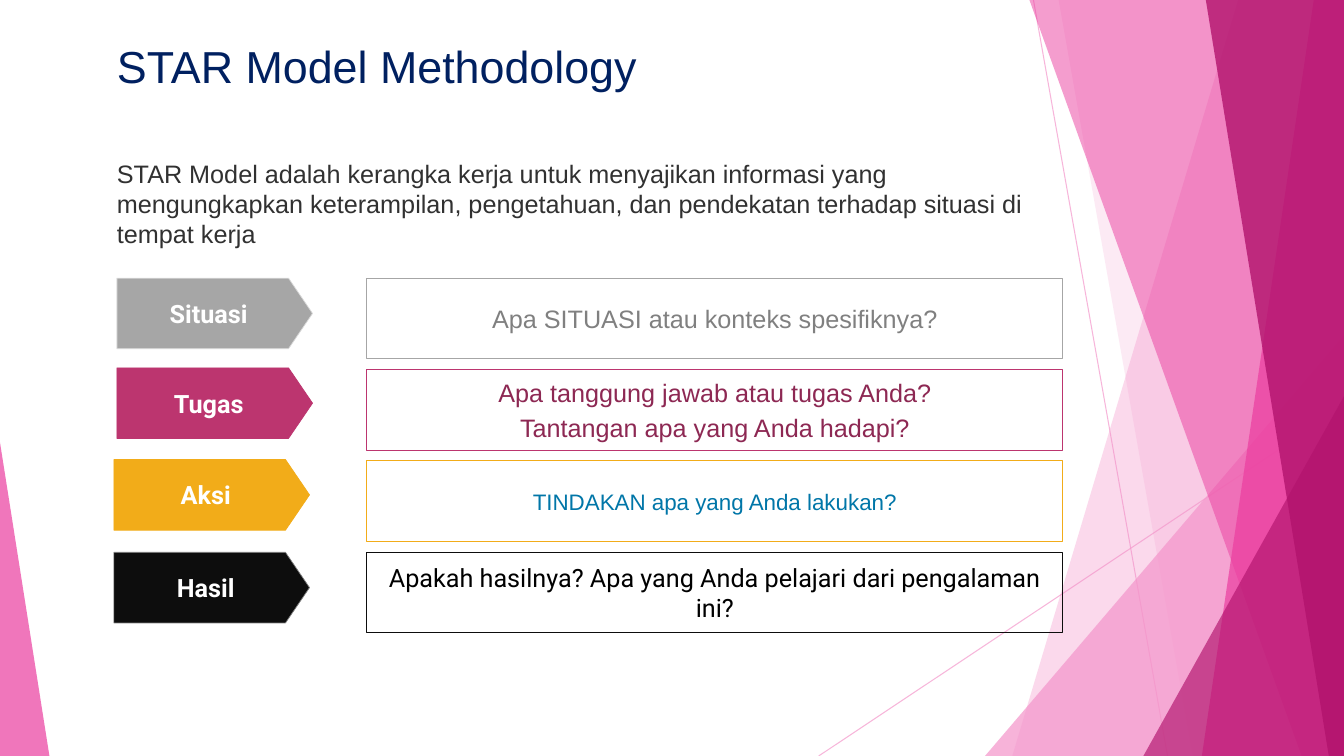
from lxml.etree import SubElement
from pptx import Presentation
from pptx.dml.color import RGBColor
from pptx.enum.shapes import MSO_CONNECTOR, MSO_SHAPE
from pptx.enum.text import MSO_ANCHOR, MSO_AUTO_SIZE, PP_ALIGN
from pptx.oxml.ns import qn
from pptx.util import Inches, Pt

WIDTH, HEIGHT = 13.33, 7.5

COLORS = {
    "light_pink": "F496CB", "pink": "EB3D9F", "magenta": "B2136D",
    "navy": "002060", "body": "313131", "white": "FFFFFF",
    "gray": "A6A6A6", "pale_gray": "D9D9D9", "mid_gray": "808080",
    "berry": "BC356F", "dark_berry": "8D2853",
    "amber": "F2AC19", "blue": "0076A8",
    "ink": "0D0D0D", "black": "000000",
}

# Facet decoration: start and end points
RAYS = [((10.25, 0), (11.58, HEIGHT)), ((WIDTH, 4.03), (8.12, HEIGHT))]

# Facets reach the right edge: top-left x, bottom-left x, colour, opacity
BACK_FACETS = [(12.28, 10.04, "light_pink", 36), (10.5, 11.83, "light_pink", 20)]
FRONT_FACETS = [
    (10.21, 12.91, "pink", 50),
    (13.03, 11.92, "pink", 70),
    (11.96, 13.18, "magenta", 80),
]

# STAR steps: label, tag left, tag top, tag fill, tag outline,
# questions, question colour, size, font, space after
STEPS = [
    ("Situasi", 1.16, 2.76, "gray", "pale_gray",
     ["Apa SITUASI atau konteks spesifiknya?"], "mid_gray", 18, "Arial", 3),
    ("Tugas", 1.16, 3.65, "berry", "berry",
     ["Apa tanggung jawab atau tugas Anda?", "Tantangan apa yang Anda hadapi?"],
     "dark_berry", 18, "Arial", 3),
    ("Aksi", 1.13, 4.56, "amber", "amber",
     ["TINDAKAN apa yang Anda lakukan?"], "blue", 16, "Arial", 0),
    ("Hasil", 1.13, 5.48, "ink", "mid_gray",
     ["Apakah hasilnya? Apa yang Anda pelajari dari pengalaman ini?"],
     "black", 18, "Roboto", 0),
]
QUESTION_TOP = 2.76
QUESTION_PITCH = (5.48 - QUESTION_TOP) / (len(STEPS) - 1)


def rgb(name):
    return RGBColor.from_string(COLORS[name])


def set_opacity(element, percent):
    color = next(element.iter(qn("a:srgbClr")))
    SubElement(color, qn("a:alpha")).set("val", str(percent * 1000))


def fill_facet(facet, color, opacity):
    facet.shadow.inherit = False
    facet.fill.solid()
    facet.fill.fore_color.rgb = rgb(color)
    facet.line.fill.background()
    set_opacity(facet.fill._xPr, opacity)


def add_ray(slide, start, end):
    ray = slide.shapes.add_connector(
        MSO_CONNECTOR.STRAIGHT, *[Inches(v) for v in start + end])
    ray.line.width = Pt(0.75)
    ray.line.color.rgb = rgb("light_pink")
    properties = ray._element.spPr
    set_opacity(properties, 70)
    SubElement(properties, qn("a:effectLst"))


def add_facet(slide, top_x, bottom_x, color, opacity):
    outline = slide.shapes.build_freeform(Inches(top_x), 0)
    corners = [(WIDTH, 0), (WIDTH, HEIGHT), (bottom_x, HEIGHT)]
    outline.add_line_segments([(Inches(x), Inches(y)) for x, y in corners])
    fill_facet(outline.convert_to_shape(), color, opacity)


def add_triangle(slide, box, apex, color, opacity):
    triangle = slide.shapes.add_shape(
        MSO_SHAPE.ISOSCELES_TRIANGLE, *[Inches(v) for v in box])
    triangle.adjustments[0] = apex
    fill_facet(triangle, color, opacity)


def write(shape, lines, color, size, font, align=PP_ALIGN.CENTER, bold=False,
          anchor=MSO_ANCHOR.MIDDLE, margin=0, before=0, after=0):
    frame = shape.text_frame
    frame.word_wrap = True
    frame.auto_size = MSO_AUTO_SIZE.NONE
    frame.vertical_anchor = anchor
    frame.margin_left = frame.margin_right = Inches(margin)
    frame.margin_top = frame.margin_bottom = Inches(margin)
    for index, line in enumerate(lines):
        paragraph = frame.add_paragraph() if index else frame.paragraphs[0]
        paragraph.alignment = align
        paragraph.line_spacing = 1.0
        paragraph.space_before, paragraph.space_after = Pt(before), Pt(after)
        run = paragraph.add_run()
        run.text = line
        run.font.name, run.font.size, run.font.bold = font, Pt(size), bold
        run.font.color.rgb = rgb(color)


def fill_placeholder(slide, placeholder, top, height, text, color, size, before=0):
    placeholder.left, placeholder.top = Inches(1.16), Inches(top)
    placeholder.width, placeholder.height = Inches(9.18), Inches(height)
    write(placeholder, [text], color, size, "Arial", PP_ALIGN.LEFT,
          anchor=MSO_ANCHOR.TOP, before=before)
    # Bring the text in front of the decoration
    slide.shapes._spTree.append(placeholder._element)


def add_panel(slide, kind, box, outline, weight):
    panel = slide.shapes.add_shape(kind, *[Inches(v) for v in box])
    panel.shadow.inherit = False
    panel.fill.background()
    panel.line.color.rgb = rgb(outline)
    panel.line.width = Pt(weight)
    return panel


def add_step(slide, index, step):
    label, left, top, fill, outline, questions, color, size, font, after = step
    question_top = QUESTION_TOP + index * QUESTION_PITCH
    question = add_panel(slide, MSO_SHAPE.RECTANGLE,
                         (3.64, question_top, 6.9, 0.8), fill, 0.75)
    write(question, questions, color, size, font, after=after)

    tag = add_panel(slide, MSO_SHAPE.PENTAGON, (left, top, 1.94, 0.7), outline, 0.5)
    tag.adjustments[0] = 0.34
    tag.fill.solid()
    tag.fill.fore_color.rgb = rgb(fill)
    write(tag, [label], "white", 18, "Roboto", bold=True, margin=0.08)


def add_decoration(slide):
    for start, end in RAYS:
        add_ray(slide, start, end)
    for facet in BACK_FACETS:
        add_facet(slide, *facet)
    add_triangle(slide, (9.77, 3.33, 3.56, 4.17), 1, "light_pink", 72)
    for facet in FRONT_FACETS:
        add_facet(slide, *facet)
    add_triangle(slide, (11.34, 3.93, 1.99, 3.57), 1, "magenta", 66)
    add_triangle(slide, (0, 4.39, 0.49, 3.11), 0, "pink", 70)


def main():
    deck = Presentation()
    deck.slide_width, deck.slide_height = Inches(WIDTH), Inches(HEIGHT)
    slide = deck.slides.add_slide(deck.slide_layouts[1])
    add_decoration(slide)

    # Title and introduction
    title, intro = slide.shapes.title, slide.placeholders[1]
    fill_placeholder(slide, title, 0.38, 0.76, "STAR Model Methodology", "navy", 32)
    fill_placeholder(
        slide, intro, 1.57, 0.91,
        "STAR Model adalah kerangka kerja untuk menyajikan informasi yang "
        "mengungkapkan keterampilan, pengetahuan, dan pendekatan terhadap "
        "situasi di tempat kerja", "body", 18, before=6)
    intro_format = intro.text_frame.paragraphs[0]._p.get_or_add_pPr()
    intro_format.set("marL", "0")
    intro_format.set("indent", "0")
    SubElement(intro_format, qn("a:buNone"))

    # STAR steps
    for index, step in enumerate(STEPS):
        add_step(slide, index, step)

    deck.save("out.pptx")


if __name__ == "__main__":
    main()
